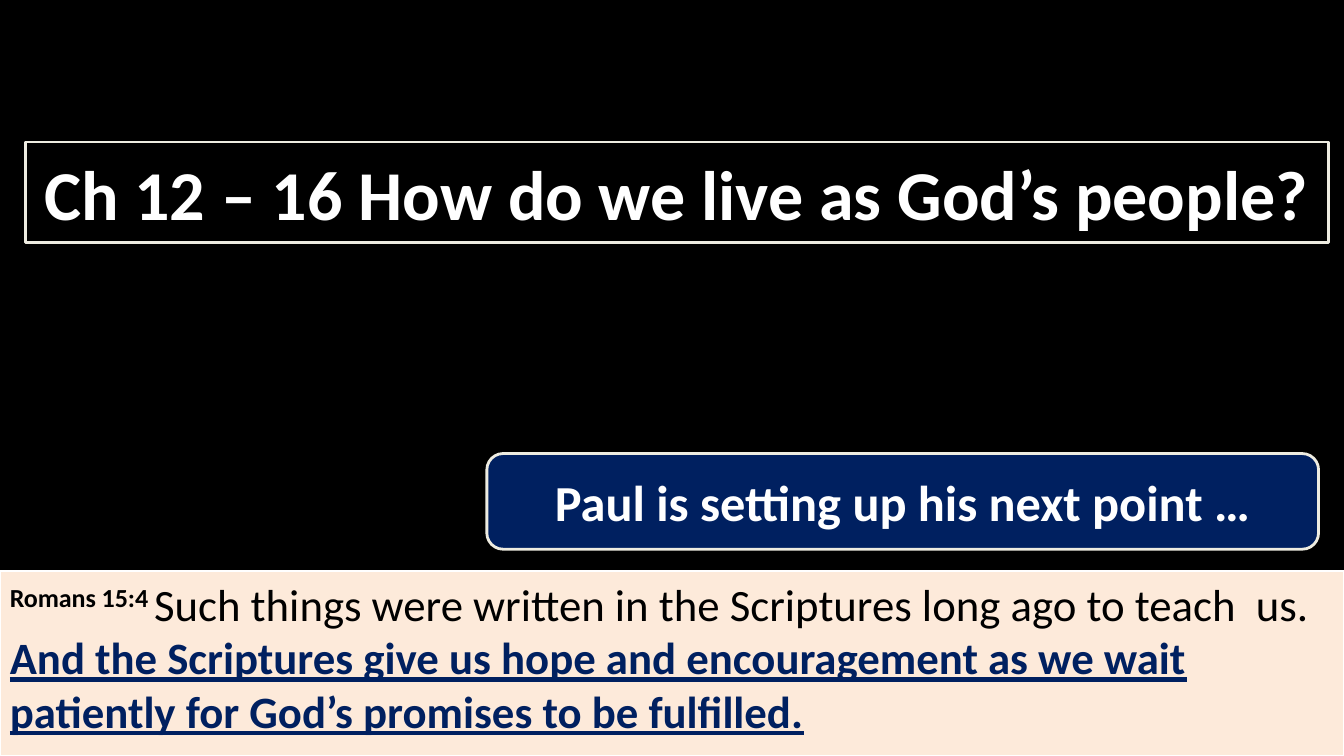
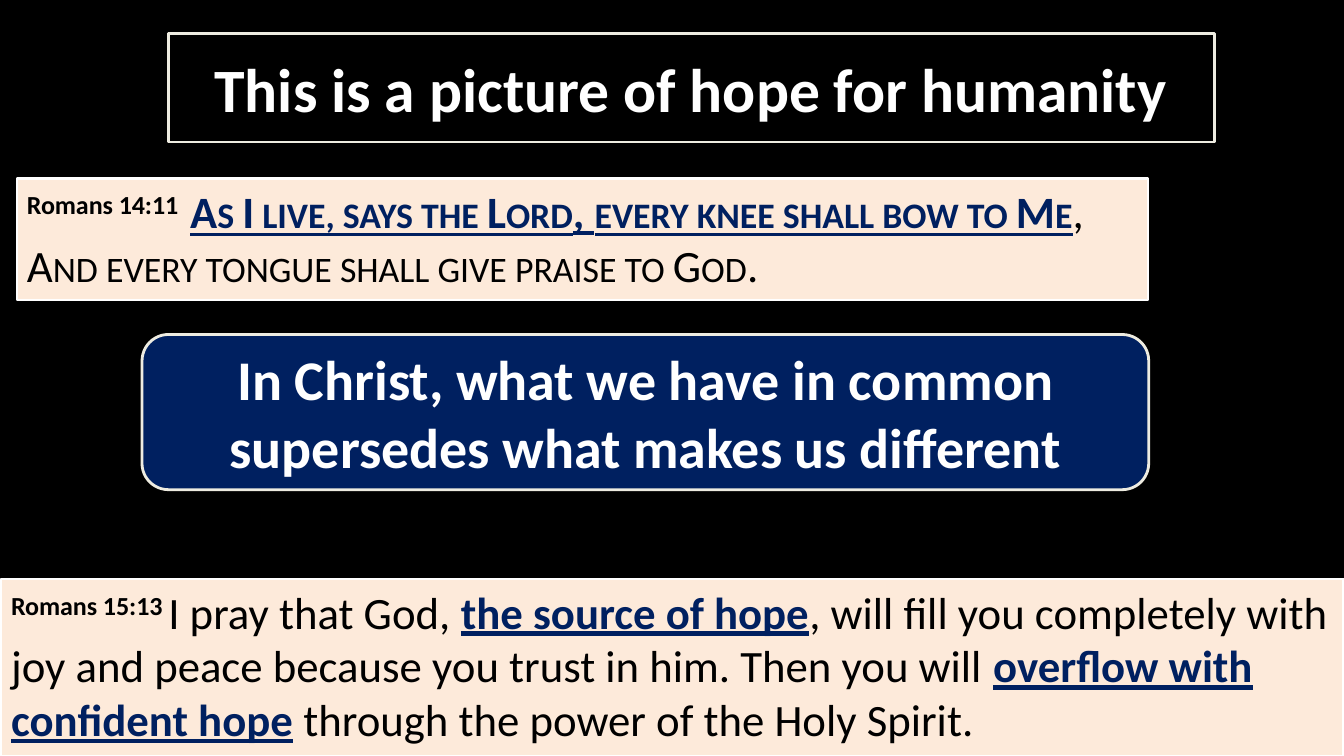
import dataclasses

import lxml.etree
import pptx
import pptx.dml.color
import pptx.enum.shapes
import pptx.enum.text
import pptx.oxml.ns
import pptx.util

Cm = pptx.util.Cm
Pt = pptx.util.Pt
RGB = pptx.dml.color.RGBColor


@dataclasses.dataclass(frozen=True)
class Theme:
    font: str = "Calibri"
    black: RGB = RGB(0x00, 0x00, 0x00)
    white: RGB = RGB(0xFF, 0xFF, 0xFF)
    navy: RGB = RGB(0x00, 0x20, 0x60)
    cream: RGB = RGB(0xFD, 0xEA, 0xDA)
    outline: RGB = RGB(0xEE, 0xEC, 0xE1)
    callout_line: float = 2
    verse_line: float = 1.5
    verse_size: int = 32
    callout_adjustments: tuple = (-0.22, 0.5, 0.17)


theme = Theme()


def paint(box, fill, line, width):
    box.fill.solid()
    box.fill.fore_color.rgb = fill
    box.line.color.rgb = line
    box.line.width = Pt(width)


def write_callout(box, fill, text, size):
    paint(box, fill, theme.outline, theme.callout_line)
    frame = box.text_frame
    frame.word_wrap = True
    frame.auto_size = pptx.enum.text.MSO_AUTO_SIZE.NONE
    frame.vertical_anchor = pptx.enum.text.MSO_ANCHOR.MIDDLE
    para = frame.paragraphs[0]
    para.text = text
    para.alignment = pptx.enum.text.PP_ALIGN.CENTER
    para.font.name = theme.font
    para.font.size = Pt(size)
    para.font.bold = True
    para.font.color.rgb = theme.white


slides = [
    {
        "title": ("Ch 12 – 16 How do we live as God’s people?", 50, (0.64, 3.58, 32.84, 2.54)),
        "point": ("Paul is setting up his next point …", 36, (12.27, 11.43, 20.96, 2.41)),
        "verses": [
            ((0, 14.4, 33.87, 4.65), [
                ("reference", "Romans 15:4 "),
                ("plain", "Such things were written in the Scriptures long ago to teach  us. "),
                ("key", "And the Scriptures give us hope and encouragement as we wait "
                        "patiently for God’s promises to be fulfilled."),
            ]),
        ],
    },
    {
        "title": ("This is a picture of hope for humanity", 44, (4.24, 0.84, 26.37, 2.74)),
        "point": ("In Christ, what we have in common supersedes what makes us different",
                  40, (3.58, 8.43, 25.37, 3.91)),
        "verses": [
            ((0.43, 4.5, 28.5, 3.07), [
                ("reference", "Romans 14:11  "),
                ("key small", "As I live, says the Lord"),
                ("key", ", "),
                ("key small", "every knee shall bow to Me"),
                ("plain", ","),
                ("break", ""),
                ("plain small", "And every tongue shall give praise to God"),
                ("plain", "."),
            ]),
            ((0.03, 14.6, 33.83, 4.45), [
                ("reference", "Romans 15:13 "),
                ("plain", "I pray that God, "),
                ("key", "the source of hope"),
                ("plain", ", will fill you completely with joy and peace because you "
                          "trust in him. Then you will "),
                ("key", "overflow with confident hope"),
                ("plain", " through the power of the Holy Spirit."),
            ]),
        ],
    },
]

deck = pptx.Presentation()
deck.slide_width = Cm(33.87)
deck.slide_height = Cm(19.05)

for content in slides:
    page = deck.slides.add_slide(deck.slide_layouts[5])
    page.background.fill.solid()
    page.background.fill.fore_color.rgb = theme.black

    text, size, place = content["title"]
    title = page.shapes.title
    title.left, title.top, title.width, title.height = map(Cm, place)
    qn = pptx.oxml.ns.qn
    geometry = lxml.etree.SubElement(
        title._element.spPr, qn("a:prstGeom"), prst="wedgeRoundRectCallout")
    guides = lxml.etree.SubElement(geometry, qn("a:avLst"))
    for number, value in enumerate(theme.callout_adjustments, 1):
        lxml.etree.SubElement(
            guides, qn("a:gd"), name=f"adj{number}", fmla=f"val {round(value * 100000)}")
    write_callout(title, theme.black, text, size)

    for place, spans in content["verses"]:
        verse = page.shapes.add_shape(
            pptx.enum.shapes.MSO_SHAPE.RECTANGLE, *map(Cm, place))
        verse.shadow.inherit = False
        paint(verse, theme.cream, theme.white, theme.verse_line)
        verse.text_frame.word_wrap = True
        verse.text_frame.vertical_anchor = pptx.enum.text.MSO_ANCHOR.TOP
        para = verse.text_frame.paragraphs[0]
        para.alignment = pptx.enum.text.PP_ALIGN.LEFT
        para.font.name = theme.font
        para.font.size = Pt(theme.verse_size)
        for style, text in spans:
            if style == "break":
                para.add_line_break()
                continue
            span = para.add_run()
            span.text = text
            is_key = style.startswith("key")
            span.font.color.rgb = theme.navy if is_key else theme.black
            span.font.bold = is_key or style == "reference"
            span.font.underline = is_key
            if style == "reference":
                span._r.get_or_add_rPr().set("baseline", "30000")
            if style.endswith("small"):
                span._r.get_or_add_rPr().set("cap", "small")

    text, size, place = content["point"]
    point = page.shapes.add_shape(
        pptx.enum.shapes.MSO_SHAPE.ROUNDED_RECTANGULAR_CALLOUT, *map(Cm, place))
    point.shadow.inherit = False
    for index, value in enumerate(theme.callout_adjustments):
        point.adjustments[index] = value
    write_callout(point, theme.navy, text, size)

deck.save("out.pptx")
